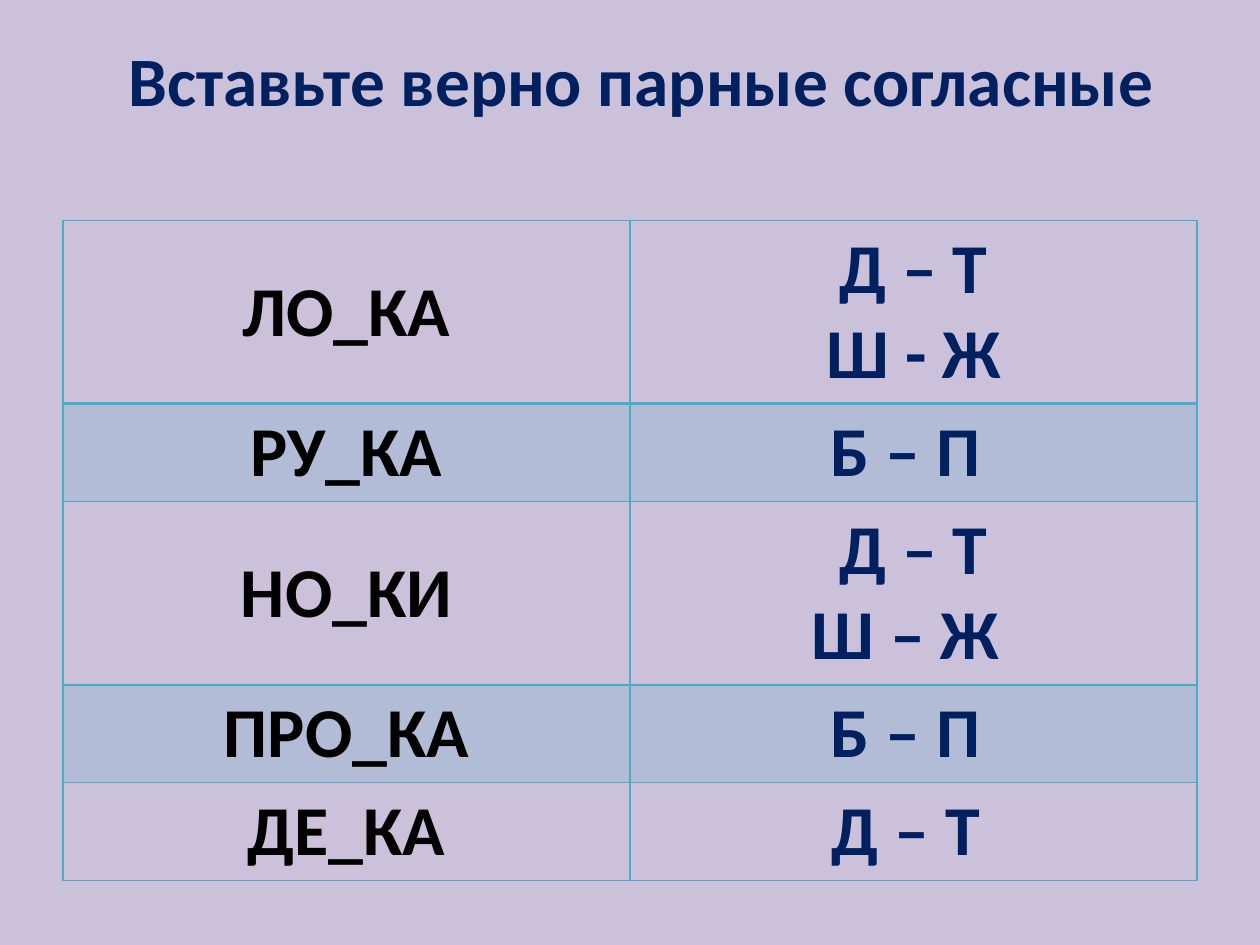
from dataclasses import dataclass

from lxml import etree
from pptx import Presentation
from pptx.dml.color import RGBColor
from pptx.enum.text import MSO_ANCHOR, PP_ALIGN
from pptx.oxml.ns import qn
from pptx.table import _Cell
from pptx.text.text import TextFrame
from pptx.util import Inches, Pt

CENTER = PP_ALIGN.CENTER
MIDDLE = MSO_ANCHOR.MIDDLE
LILAC = RGBColor(0xCC, 0xC1, 0xDA)
NAVY = RGBColor(0x00, 0x20, 0x60)
BLACK = RGBColor(0x00, 0x00, 0x00)
TEAL = RGBColor(0x4B, 0xAC, 0xC6)
FONT = "Calibri"
LINE = 0.67
PAD = 0.1


@dataclass
class Task:
    word: str
    pairs: str


TASKS = [
    Task("ЛО_КА", "Д – Т\nШ - Ж"),
    Task("РУ_КА", "Б – П "),
    Task("НО_КИ", "Д – Т\nШ – Ж "),
    Task("ПРО_КА", "Б – П "),
    Task("ДЕ_КА", "Д – Т "),
]


def write(frame: TextFrame, text: str, size: float, color: RGBColor) -> None:
    frame.text = text
    for para in frame.paragraphs:
        para.alignment = CENTER
        for run in para.runs:
            font = run.font
            font.name = FONT
            font.size = Pt(size)
            font.bold = True
            font.color.rgb = color


def shade(cell: _Cell, band: bool) -> None:
    if not band:
        cell.fill.background()
        return
    cell.fill.solid()
    cell.fill.fore_color.rgb = TEAL
    tint = cell._tc.tcPr.find(".//" + qn("a:srgbClr"))
    etree.SubElement(tint, qn("a:alpha"), val="20000")


def border(cell: _Cell, top: float, base: float) -> None:
    sides = [("L", 1), ("R", 1), ("T", top), ("B", base)]
    for spot, (side, width) in enumerate(sides):
        line = etree.Element(qn(f"a:ln{side}"), w=str(Pt(width)))
        fill = etree.SubElement(line, qn("a:solidFill"))
        etree.SubElement(fill, qn("a:srgbClr"), val=str(TEAL))
        cell._tc.tcPr.insert(spot, line)


def main() -> None:
    deck = Presentation()
    deck.slide_width = Inches(10)
    deck.slide_height = Inches(7.5)
    slide = deck.slides.add_slide(deck.slide_layouts[5])
    back = slide.background.fill
    back.solid()
    back.fore_color.rgb = LILAC

    title = slide.shapes.title
    title.left, title.top = Inches(0.59), Inches(0)
    title.width, title.height = Inches(9), Inches(1.25)
    title.text_frame.vertical_anchor = MIDDLE
    write(title.text_frame, "Вставьте верно парные согласные", 39.6, NAVY)

    highs = [PAD + LINE * len(task.pairs.split("\n")) for task in TASKS]
    table = slide.shapes.add_table(
        len(TASKS), 2, Inches(0.5), Inches(1.75), Inches(9), Inches(sum(highs))
    ).table
    table.first_row = False
    table.horz_banding = False
    for row, (task, high) in enumerate(zip(TASKS, highs)):
        table.rows[row].height = Inches(high)
        for col, (text, color) in enumerate([(task.word, BLACK), (task.pairs, NAVY)]):
            cell = table.cell(row, col)
            cell.vertical_anchor = MIDDLE
            write(cell.text_frame, text, 40, color)
            shade(cell, row % 2 == 1)
            border(cell, 2 if row == 1 else 1, 2 if row == 0 else 1)

    deck.save("out.pptx")


if __name__ == "__main__":
    main()
